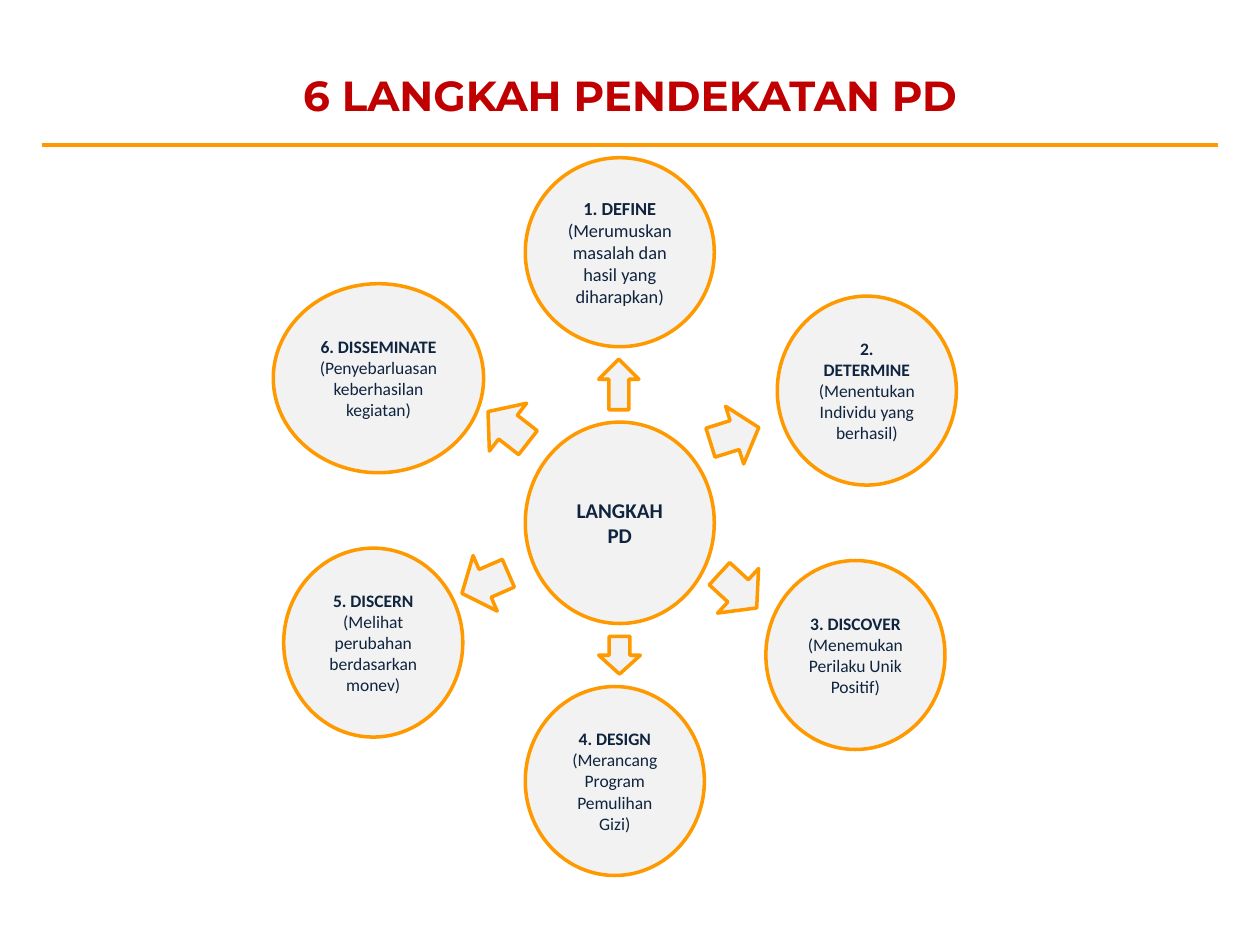
from dataclasses import dataclass

import pptx
import pptx.dml.color
import pptx.enum.shapes
import pptx.enum.text
import pptx.oxml.ns
import pptx.util
from lxml import etree

Cm = pptx.util.Cm
Pt = pptx.util.Pt
Shape = pptx.enum.shapes.MSO_SHAPE

ORANGE = "FF9900"
PALE = "F2F2F2"
NAVY = "0F243E"
RED = "C00000"


@dataclass
class Circle:
    left: float
    top: float
    heading: str
    detail: str = ""
    width: float = 3.61
    height: float = 3.81
    size: float = 10


@dataclass
class Arrow:
    left: float
    top: float
    rotation: float
    width: float = 1.22
    height: float = 1.02


CIRCLES = [
    Circle(10.59, 8.51, "LANGKAH PD", width=3.81, height=4.06, size=12),
    Circle(10.59, 3.18, "1. DEFINE ", "(Merumuskan masalah dan hasil yang diharapkan)",
           width=3.81, size=10.5),
    Circle(15.67, 5.97, "2. DETERMINE ", "(Menentukan Individu yang berhasil)"),
    Circle(15.44, 11.3, "3. DISCOVER ", "(Menemukan Perilaku Unik Positif)"),
    Circle(10.59, 13.84, "4. DESIGN ", "(Merancang Program Pemulihan Gizi)"),
    Circle(5.72, 11.05, "5. DISCERN ", "(Melihat perubahan berdasarkan monev)"),
    Circle(5.51, 5.72, "6. DISSEMINATE ", "(Penyebarluasan keberhasilan kegiatan)",
           width=4.24),
]

ARROWS = [
    Arrow(12.07, 12.83, 0, width=0.84, height=0.76),
    Arrow(9.17, 11.25, 66.5),
    Arrow(14.27, 11.4, 312.6),
    Arrow(9.63, 8.1, 127.9),
    Arrow(14.2, 8.26, 252.6),
    Arrow(12.07, 7.24, 180, width=0.81),
]


def color(value: str) -> pptx.dml.color.RGBColor:
    return pptx.dml.color.RGBColor.from_string(value)


def add_span(para, text: str, font: str, size: float, tint: str, bold: bool) -> None:
    span = para.add_run()
    span.text = text
    span.font.name = font
    span.font.size = Pt(size)
    span.font.bold = bold
    span.font.color.rgb = color(tint)


def add_outlined(page, kind, item: Circle | Arrow):
    box = page.shapes.add_shape(
        kind, Cm(item.left), Cm(item.top), Cm(item.width), Cm(item.height))
    box.shadow.inherit = False
    box.fill.solid()
    box.fill.fore_color.rgb = color(PALE)
    box.line.color.rgb = color(ORANGE)
    box.line.width = Pt(2)
    return box


def add_circle(page, circle: Circle) -> None:
    frame = add_outlined(page, Shape.OVAL, circle).text_frame
    frame.word_wrap = True
    frame.vertical_anchor = pptx.enum.text.MSO_ANCHOR.MIDDLE
    para = frame.paragraphs[0]
    para.alignment = pptx.enum.text.PP_ALIGN.CENTER
    add_span(para, circle.heading, "Calibri", circle.size, NAVY, True)
    if circle.detail:
        add_span(para, circle.detail, "Calibri", circle.size, NAVY, False)


def add_arrow(page, arrow: Arrow) -> None:
    add_outlined(page, Shape.DOWN_ARROW, arrow).rotation = arrow.rotation


def add_title(page, text: str) -> None:
    title = page.shapes.title
    title.left, title.top = Cm(0), Cm(0.64)
    title.width, title.height = Cm(25.4), Cm(2.54)
    title.text_frame.vertical_anchor = pptx.enum.text.MSO_ANCHOR.MIDDLE
    para = title.text_frame.paragraphs[0]
    para.alignment = pptx.enum.text.PP_ALIGN.CENTER
    add_span(para, text, "Montserrat", 24, RED, True)


def add_rule(page) -> None:
    rule = page.shapes.add_connector(
        pptx.enum.shapes.MSO_CONNECTOR.STRAIGHT, Cm(0.84), Cm(2.92), Cm(24.56), Cm(2.92))
    rule.line.color.rgb = color(ORANGE)
    rule.line.width = Pt(2.25)
    etree.SubElement(rule.element.spPr, pptx.oxml.ns.qn("a:effectLst"))


def main() -> None:
    deck = pptx.Presentation()
    deck.slide_width, deck.slide_height = Cm(25.4), Cm(19.05)
    page = deck.slides.add_slide(deck.slide_layouts[5])
    add_title(page, "6 LANGKAH PENDEKATAN PD")
    add_rule(page)
    for circle in CIRCLES:
        add_circle(page, circle)
    for arrow in ARROWS:
        add_arrow(page, arrow)
    deck.save("out.pptx")


if __name__ == "__main__":
    main()
